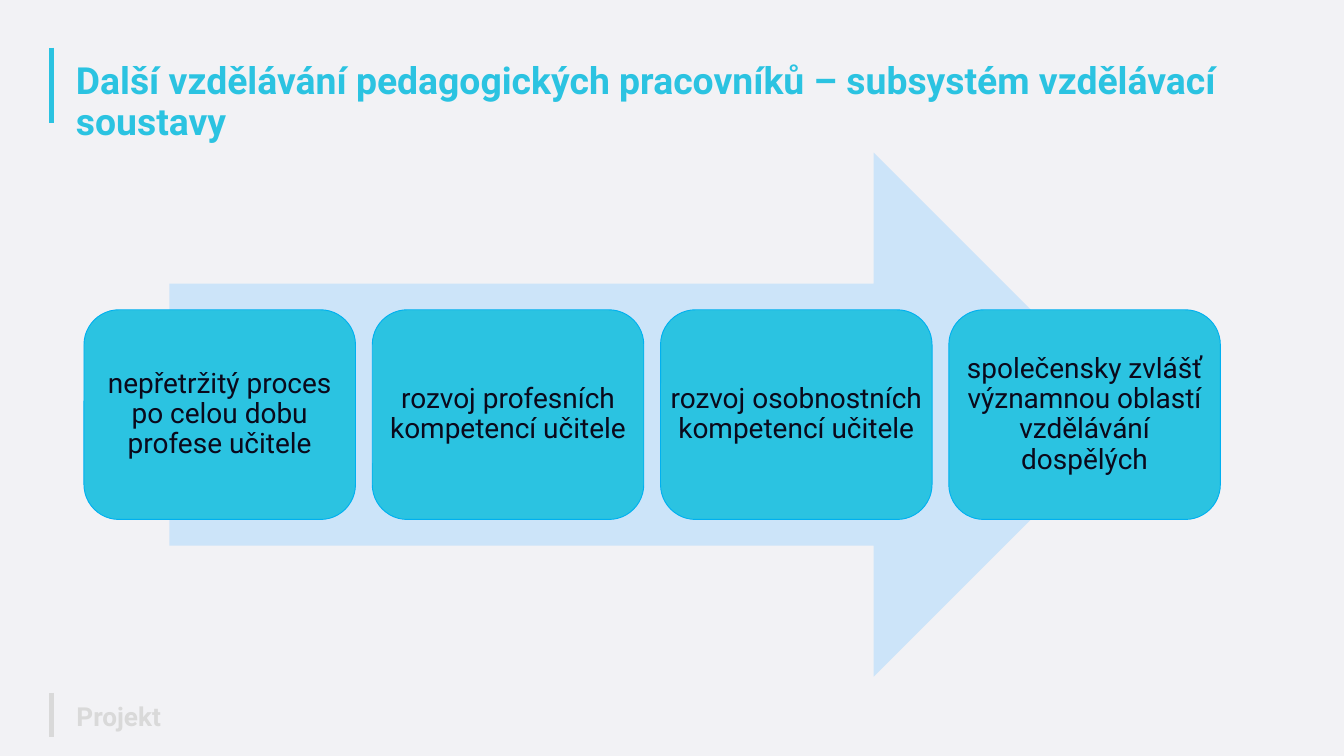
from pptx import Presentation
from pptx.dml.color import RGBColor
from pptx.enum.shapes import MSO_CONNECTOR, MSO_SHAPE
from pptx.enum.text import MSO_ANCHOR, PP_ALIGN
from pptx.oxml.ns import qn
from pptx.util import Inches, Pt
from lxml.etree import SubElement

COLUMNS, ROWS = 20, 11.25
CARDS = [
    "nepřetržitý proces po celou dobu profese učitele",
    "rozvoj profesních kompetencí učitele",
    "rozvoj osobnostních kompetencí učitele",
    "společensky zvlášť významnou oblastí vzdělávání dospělých",
]


def colour(value):
    """Turn a hex string into a colour."""
    return RGBColor.from_string(value)


def write(frame, text, size=30, ink="0A091B", bold=False,
          align=PP_ALIGN.LEFT, anchor=MSO_ANCHOR.MIDDLE, inset=0.12):
    """Fill a text frame with one formatted paragraph."""
    frame.word_wrap = True
    frame.vertical_anchor = anchor
    frame.margin_left = frame.margin_right = Inches(inset)
    frame.margin_top = frame.margin_bottom = Inches(0.05)
    para = frame.paragraphs[0]
    para.alignment = align
    para.line_spacing = 0.9
    span = para.add_run()
    span.text = text
    span.font.name = "Roboto"
    span.font.size = Pt(size)
    span.font.bold = bold
    span.font.color.rgb = colour(ink)


class Page:
    """Hold the style and the current slide on a one-inch grid."""

    accent, edge, pale, muted = "2BC3E1", "00B0F0", "CCE4F9", "D9D9D9"

    def __init__(self, deck, background):
        """Add a title-only slide with a plain background."""
        self.cell_width = deck.slide_width / COLUMNS
        self.cell_height = deck.slide_height / ROWS
        self.slide = deck.slides.add_slide(deck.slide_layouts[5])
        self.slide.background.fill.solid()
        self.slide.background.fill.fore_color.rgb = colour(background)

    def area(self, column, row, width, height):
        """Convert grid units to slide lengths."""
        return (int(column * self.cell_width), int(row * self.cell_height),
                int(width * self.cell_width), int(height * self.cell_height))

    def title(self, text, *place):
        """Place and format the title placeholder."""
        box = self.slide.shapes.title
        box.left, box.top, box.width, box.height = self.area(*place)
        write(box.text_frame, text, size=40, ink=self.accent, bold=True,
              anchor=MSO_ANCHOR.TOP, inset=0.1)

    def bar(self, column, top, bottom, ink):
        """Draw a thick vertical rule."""
        left, start, _, end = self.area(column, top, 0, bottom)
        line = self.slide.shapes.add_connector(
            MSO_CONNECTOR.STRAIGHT, left, start, left, end)
        line.line.color.rgb = colour(ink)
        line.line.width = Pt(5)
        SubElement(line._element.spPr, qn("a:effectLst"))

    def shape(self, kind, place, fill, outline=None, parent=None):
        """Draw a filled preset shape on the slide or in a group."""
        shapes = (parent or self.slide).shapes
        shape = shapes.add_shape(kind, *self.area(*place))
        shape.shadow.inherit = False
        shape.fill.solid()
        shape.fill.fore_color.rgb = colour(fill)
        if outline:
            shape.line.color.rgb = colour(outline)
            shape.line.width = Pt(1)
        else:
            shape.line.fill.background()

    def label(self, text, place, parent=None, **style):
        """Add a text box on the slide or in a group."""
        shapes = (parent or self.slide).shapes
        box = shapes.add_textbox(*self.area(*place))
        write(box.text_frame, text, **style)

    def card(self, text, *place):
        """Group a rounded card with its full-width centred label."""
        group = self.slide.shapes.add_group_shape()
        self.shape(MSO_SHAPE.ROUNDED_RECTANGLE, place, self.accent, self.edge, group)
        self.label(text, place, group, align=PP_ALIGN.CENTER)


def main():
    """Build and save the deck."""
    deck = Presentation()
    deck.slide_width, deck.slide_height = Inches(20), Inches(11.25)
    page = Page(deck, "F2F2F5")
    page.bar(0.77, 0.71, 1.83, page.accent)
    page.bar(0.77, 10.31, 10.96, page.muted)
    page.label("Projekt", (1.04, 10.34, 4, 0.7), size=28, ink=page.muted,
               bold=True, inset=0.1)
    page.title("Další vzdělávání pedagogických pracovníků – subsystém "
               "vzdělávací soustavy", 1.03, 0.88, 18.05, 1.31)
    page.shape(MSO_SHAPE.RIGHT_ARROW, (2.52, 2.27, 14.38, 7.8), page.pale)
    width, gap = 4.04, 0.25
    for index, text in enumerate(CARDS):
        page.card(text, 1.25 + index * (width + gap), 4.61, width, 3.12)
    deck.save("out.pptx")


if __name__ == "__main__":
    main()
